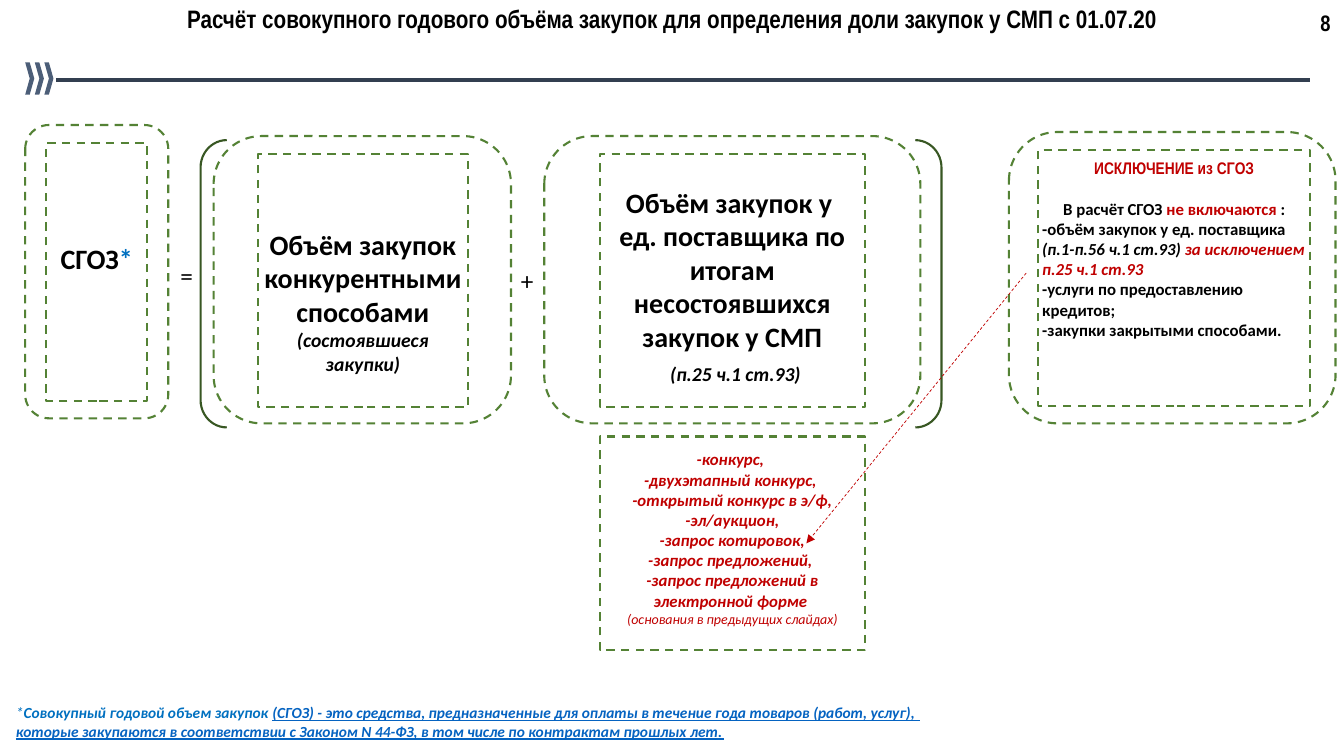
from lxml.etree import SubElement
from pptx import Presentation
from pptx.dml.color import RGBColor
from pptx.enum.dml import MSO_LINE
from pptx.enum.shapes import MSO_CONNECTOR, MSO_SHAPE
from pptx.enum.text import MSO_ANCHOR, PP_ALIGN
from pptx.oxml.ns import qn
from pptx.util import Pt

BLACK = RGBColor(0x00, 0x00, 0x00)
WHITE = RGBColor(0xFF, 0xFF, 0xFF)
RED = RGBColor(0xC0, 0x00, 0x00)
BLUE = RGBColor(0x00, 0x70, 0xC0)
LINK_BLUE = RGBColor(0x05, 0x63, 0xC1)
GREEN = RGBColor(0x54, 0x82, 0x35)
DARK_GREEN = RGBColor(0x38, 0x57, 0x23)
SLATE = RGBColor(0x4C, 0x5E, 0x78)
NAVY = RGBColor(0x33, 0x3F, 0x50)

LEFT, CENTER = PP_ALIGN.LEFT, PP_ALIGN.CENTER
NARROW = "Arial Narrow"


def run(text, size, color=BLACK, bold=True, italic=False, underline=False, font="Calibri"):
    return text, size, color, bold, italic, underline, font


def write(frame, paragraphs, margins):
    """Fill a frame; each paragraph is (alignment, space before, runs)."""
    frame.word_wrap = True
    frame.vertical_anchor = MSO_ANCHOR.TOP
    frame.margin_left = frame.margin_right = Pt(margins[0])
    frame.margin_top = Pt(margins[1])
    frame.margin_bottom = Pt(0)
    for index, (alignment, space_before, runs) in enumerate(paragraphs):
        paragraph = frame.add_paragraph() if index else frame.paragraphs[0]
        paragraph.alignment = alignment
        paragraph.space_before = Pt(space_before)
        for text, size, color, bold, italic, underline, name in runs:
            piece = paragraph.add_run()
            piece.text = text
            font = piece.font
            font.size, font.name = Pt(size), name
            font.bold, font.italic, font.underline = bold, italic, underline
            font.color.rgb = color


def add_text(shapes, box, paragraphs, margins=(7.2, 3.6)):
    text_box = shapes.add_textbox(*map(Pt, box))
    write(text_box.text_frame, paragraphs, margins)


def add_shape(shapes, kind, box, fill=None, line=None, dashed=False):
    shape = shapes.add_shape(kind, *map(Pt, box))
    shape.shadow.inherit = False
    if fill is None:
        shape.fill.background()
    else:
        shape.fill.solid()
        shape.fill.fore_color.rgb = fill
    if line is None:
        shape.line.fill.background()
    else:
        shape.line.color.rgb = line
        shape.line.width = Pt(1.5)
        if dashed:
            shape.line.dash_style = MSO_LINE.DASH
    return shape


def add_panel(shapes, box, paragraphs, text_top):
    panel = add_shape(shapes, MSO_SHAPE.RECTANGLE, box, line=GREEN, dashed=True)
    write(panel.text_frame, paragraphs, (2.9, text_top))


def add_card(slide, frame_box, panel_box, paragraphs, text_top):
    """Group a rounded dashed frame with the text panel inside it."""
    shapes = slide.shapes.add_group_shape().shapes
    frame = add_shape(shapes, MSO_SHAPE.ROUNDED_RECTANGLE, frame_box, WHITE, GREEN, True)
    color = frame.fill._xPr.find(".//" + qn("a:srgbClr"))
    SubElement(color, qn("a:alpha"), val="90000")
    add_panel(shapes, panel_box, paragraphs, text_top)


def add_bracket(slide, left, rotation):
    bracket = add_shape(slide.shapes, MSO_SHAPE.LEFT_BRACKET, (left, 100.1, 18.7, 205.2),
                        line=DARK_GREEN)
    bracket.adjustments[0] = 1.045
    bracket.rotation = rotation


def add_line(slide, start, end, color, width):
    connector = slide.shapes.add_connector(MSO_CONNECTOR.STRAIGHT, *map(Pt, start + end))
    connector.line.color.rgb = color
    connector.line.width = Pt(width)
    SubElement(connector._element.spPr, qn("a:effectLst"))
    return connector


def add_arrow(slide, start, end):
    arrow = add_line(slide, start, end, RED, 0.5)
    arrow.line.dash_style = MSO_LINE.DASH
    SubElement(arrow.line._get_or_add_ln(), qn("a:tailEnd"), type="triangle")


def add_header(slide):
    title = slide.shapes.title
    title.left, title.top, title.width, title.height = map(Pt, (120.2, 0, 720, 36))
    heading = "Расчёт совокупного годового объёма закупок для определения доли закупок у СМП с 01.07.20"
    write(title.text_frame, [(CENTER, 0, [run(heading, 18, font=NARROW)])], (7.2, 2.2))
    add_text(slide.shapes, (936, 0, 24, 30), [(LEFT, 0, [run("8", 16, font=NARROW)])], (7.2, 6.5))
    add_line(slide, (40.3, 57), (936, 57), NAVY, 2.75)
    for index in range(3):
        add_shape(slide.shapes, MSO_SHAPE.CHEVRON, (18 + 6.85 * index, 44.6, 6.5, 23), SLATE)


def add_formula(slide):
    add_card(slide, (18, 89.3, 102.2, 209.5), (33.1, 102.2, 72, 184.3),
             [(CENTER, 0, [run("СГОЗ", 20), run("*", 20, BLUE)])], 70)
    add_card(slide, (152.6, 97.2, 212.4, 205.2), (184.3, 110.2, 149.8, 180.7), [
        (CENTER, 0, [run("Объём закупок конкурентными способами", 20)]),
        (CENTER, 0, [run("(состоявшиеся закупки)", 14, italic=True)]),
    ], 52)
    add_card(slide, (388.8, 97.2, 268.6, 205.2), (428.4, 110.2, 189.4, 180.7), [
        (CENTER, 0, [run("Объём закупок у ", 20)]),
        (CENTER, 0, [run("ед. поставщика по итогам несостоявшихся закупок у СМП", 20)]),
        (CENTER, 0, [run(" ", 20), run("(п.25 ч.1 ст.93)", 14, italic=True)]),
    ], 22)
    for sign, left, top in (("=", 121.7, 182.2), ("+", 365, 185.8)):
        add_text(slide.shapes, (left, top, 24, 29),
                 [(LEFT, 0, [run(sign, 18, bold=False)])])
    add_bracket(slide, 143.3, 0)
    add_bracket(slide, 653.8, 180)


def add_procedures(slide):
    procedures = ("-конкурс, ", "-двухэтапный конкурс, ", "-открытый конкурс в э/ф,",
                  "-эл/аукцион,", "-запрос котировок,", "-запрос предложений, ",
                  "-запрос предложений в электронной форме ")
    paragraphs = [(CENTER, 0, [run(text, 12, RED, italic=True)]) for text in procedures]
    note = run("(основания в предыдущих слайдах)", 10, RED, False, True)
    add_panel(slide.shapes, (428.4, 311.8, 189.4, 152.6),
              paragraphs + [(CENTER, 0, [note])], 9)


def add_exclusions(slide):
    add_card(slide, (720.7, 94.3, 233.3, 208.1), (741.6, 107.3, 194.4, 182.9), [
        (CENTER, 0, [run("ИСКЛЮЧЕНИЕ из СГОЗ", 12, RED, font=NARROW)]),
        (CENTER, 14.6, [run("В расчёт СГОЗ ", 12), run("не включаются ", 12, RED), run(":", 12)]),
        (LEFT, 0, [run("-объём закупок у ед. поставщика ", 12),
                   run("(п.1-п.56 ч.1 ст.93) ", 12, italic=True),
                   run("за исключением п.25 ч.1 ст.93", 12, RED, italic=True)]),
        (LEFT, 0, [run("-услуги по предоставлению кредитов;", 12)]),
        (LEFT, 0, [run("-закупки закрытыми способами.", 12)]),
    ], 5.5)


def add_footnote(slide):
    add_text(slide.shapes, (4.3, 499, 720, 36), [
        (LEFT, 0, [
            run("*", 11, BLUE, False, True),
            run("Совокупный годовой объем закупок ", 11, BLUE, italic=True),
            run("(СГОЗ) - это средства, предназначенные для оплаты в течение года товаров (работ, услуг), ",
                11, LINK_BLUE, italic=True, underline=True)]),
        (LEFT, 0, [
            run("которые закупаются в соответствии с Законом N 44-ФЗ, в том числе по контрактам прошлых лет.",
                11, LINK_BLUE, italic=True, underline=True)]),
    ])


def main():
    presentation = Presentation()
    presentation.slide_width, presentation.slide_height = Pt(960), Pt(540)
    slide = presentation.slides.add_slide(presentation.slide_layouts[5])
    add_header(slide)
    add_formula(slide)
    add_procedures(slide)
    add_exclusions(slide)
    add_arrow(slide, (733, 195.1), (576, 388.1))
    add_footnote(slide)
    presentation.save("out.pptx")


if __name__ == "__main__":
    main()
